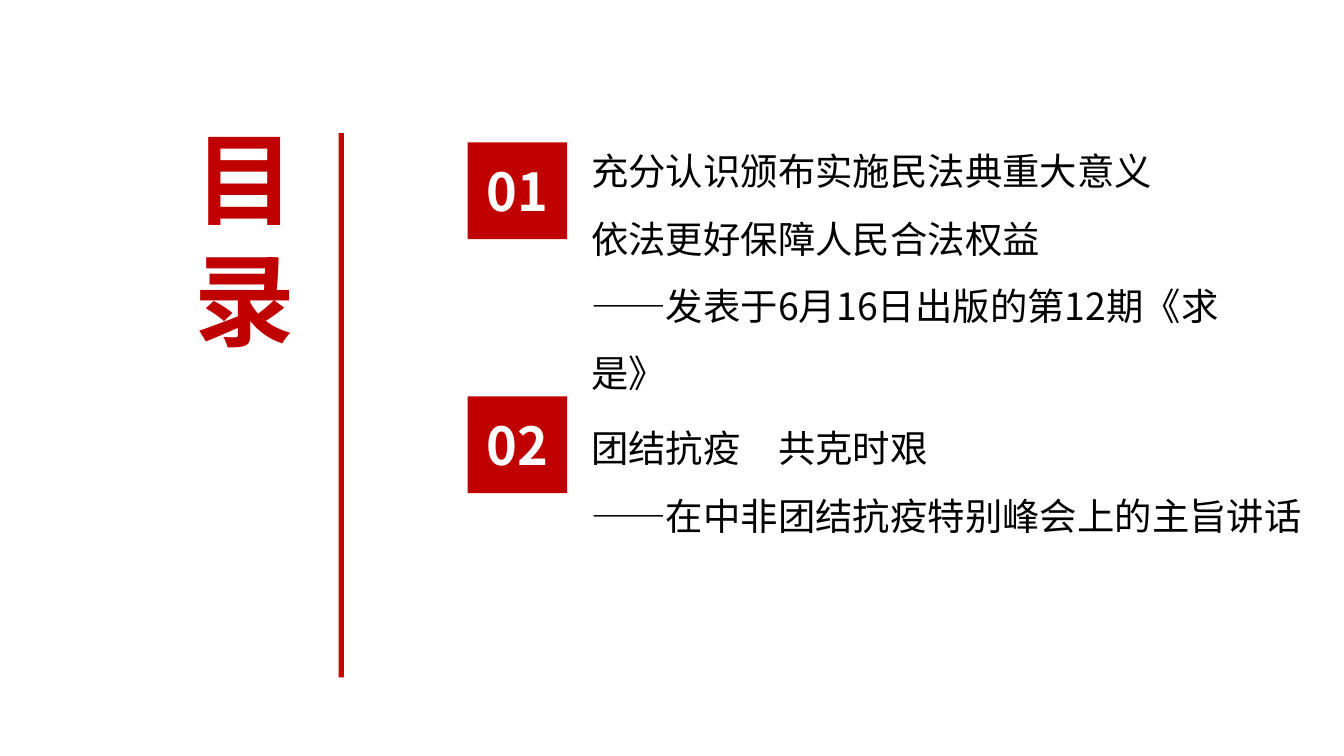
from dataclasses import dataclass

from lxml.etree import SubElement
from pptx import Presentation
from pptx.dml.color import RGBColor
from pptx.enum.shapes import MSO_SHAPE
from pptx.enum.text import MSO_ANCHOR, MSO_AUTO_SIZE, PP_ALIGN
from pptx.oxml.ns import qn
from pptx.util import Inches, Pt


@dataclass(frozen=True)
class Theme:
    font: str = "Noto Sans CJK SC"
    red: RGBColor = RGBColor(0xC0, 0x00, 0x00)
    rule: RGBColor = RGBColor(0xC8, 0x00, 0x00)
    black: RGBColor = RGBColor(0x00, 0x00, 0x00)
    white: RGBColor = RGBColor(0xFF, 0xFF, 0xFF)
    title_size: int = 54
    number_size: int = 28
    entry_size: int = 20


THEME = Theme()
SLIDE_WIDTH = 10
SLIDE_HEIGHT = SLIDE_WIDTH * 9 / 16

ENTRIES = [
    {
        "box": (3.48, 0.89, 6.2, 1.62),
        "badge_drop": 0.17,
        "number": "01",
        "lines": [
            "充分认识颁布实施民法典重大意义",
            "依法更好保障人民合法权益",
            "——发表于6月16日出版的第12期《求是》",
        ],
    },
    {
        "box": (3.48, 2.95, 6.38, 1.11),
        "badge_drop": 0,
        "number": "02",
        "lines": ["团结抗疫　共克时艰", "——在中非团结抗疫特别峰会上的主旨讲话"],
    },
]


def set_attributes(target, values):
    for name, value in values.items():
        setattr(target, name, value)


def write_text(text_frame, lines, size, color, bold=False, frame_format=None, paragraph_format=None):
    set_attributes(text_frame, {"word_wrap": True, **(frame_format or {})})
    for index, line in enumerate(lines):
        paragraph = text_frame.add_paragraph() if index else text_frame.paragraphs[0]
        set_attributes(paragraph, paragraph_format or {})
        run = paragraph.add_run()
        run.text = line
        set_attributes(run.font, {"name": THEME.font, "size": Pt(size), "bold": bold})
        run.font.color.rgb = color
        SubElement(run.font._element, qn("a:ea"), typeface=THEME.font)


def add_block(shapes, left, top, width, height, color):
    block = shapes.add_shape(
        MSO_SHAPE.RECTANGLE, Inches(left), Inches(top), Inches(width), Inches(height)
    )
    block.shadow.inherit = False
    block.fill.solid()
    block.fill.fore_color.rgb = color
    block.line.fill.background()
    return block


def add_heading(slide, left, top, width, height):
    title = slide.shapes.title
    set_attributes(title, {
        "left": Inches(left), "top": Inches(top),
        "width": Inches(1.2), "height": Inches(1.89),
    })
    write_text(
        title.text_frame, ["目录"], THEME.title_size, THEME.red, bold=True,
        frame_format={
            "auto_size": MSO_AUTO_SIZE.SHAPE_TO_FIT_TEXT,
            "vertical_anchor": MSO_ANCHOR.TOP,
            "margin_left": Inches(0.07), "margin_right": Inches(0.07),
            "margin_top": Inches(0.04), "margin_bottom": Inches(0.04),
        },
        paragraph_format={"alignment": PP_ALIGN.LEFT},
    )
    rule_width, rule_drop = 0.04, 0.16
    add_block(slide.shapes, left + width - rule_width, top + rule_drop,
              rule_width, height - rule_drop, THEME.rule)


def add_entry(slide, left, top, width, height, badge_drop, number, lines):
    text_offset = 0.82
    group = slide.shapes.add_group_shape()
    text_box = group.shapes.add_textbox(
        Inches(left + text_offset), Inches(top), Inches(width - text_offset), Inches(height)
    )
    write_text(
        text_box.text_frame, lines, THEME.entry_size, THEME.black,
        frame_format={"auto_size": MSO_AUTO_SIZE.SHAPE_TO_FIT_TEXT},
        paragraph_format={"line_spacing": 1.5},
    )
    badge = add_block(group.shapes, left, top + badge_drop, 0.74, 0.72, THEME.red)
    write_text(
        badge.text_frame, [number], THEME.number_size, THEME.white, bold=True,
        frame_format={"vertical_anchor": MSO_ANCHOR.MIDDLE},
        paragraph_format={"alignment": PP_ALIGN.CENTER},
    )


def main():
    presentation = Presentation()
    set_attributes(presentation, {
        "slide_width": Inches(SLIDE_WIDTH), "slide_height": Inches(SLIDE_HEIGHT),
    })
    slide = presentation.slides.add_slide(presentation.slide_layouts.get_by_name("Title Only"))
    add_heading(slide, 1.38, 0.83, 1.18, 4.21)
    for entry in ENTRIES:
        add_entry(slide, *entry["box"], entry["badge_drop"], entry["number"], entry["lines"])
    presentation.save("out.pptx")


if __name__ == "__main__":
    main()
